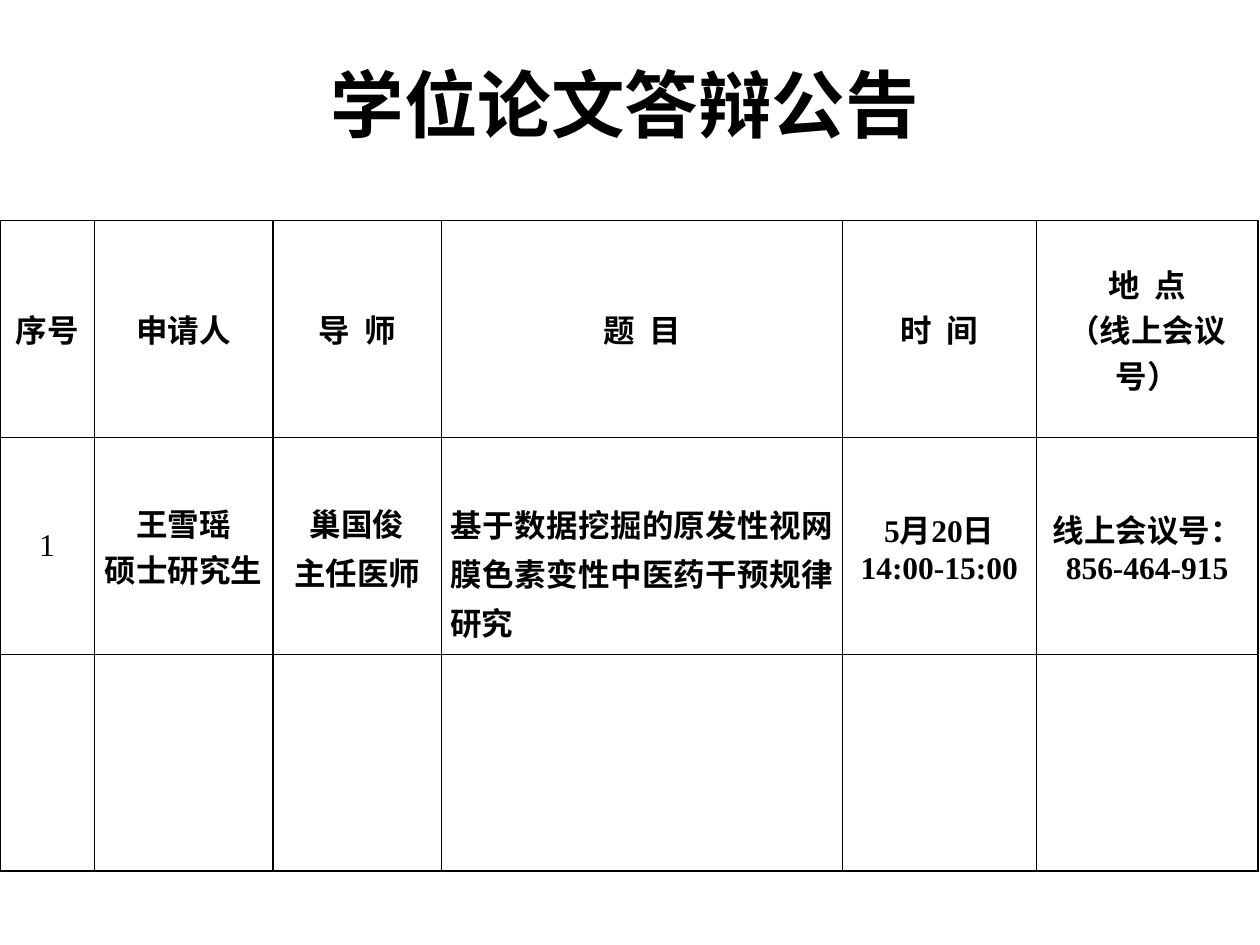
"""Build a one-slide thesis defence announcement with a schedule table."""
from lxml import etree
from pptx import Presentation
from pptx.dml.color import RGBColor
from pptx.enum.text import MSO_ANCHOR, MSO_AUTO_SIZE, PP_ALIGN
from pptx.oxml.ns import qn
from pptx.util import Cm, Pt

BLACK = RGBColor(0, 0, 0)
WHITE = RGBColor(255, 255, 255)
CENTER = PP_ALIGN.CENTER
JUSTIFY = PP_ALIGN.JUSTIFY
MIDDLE = MSO_ANCHOR.MIDDLE
NO_AUTOFIT = MSO_AUTO_SIZE.NONE
FONT = "Times New Roman"
TITLE_ONLY = 5
TOPIC_COLUMN = 3
COLUMN_WIDTHS = [1.9, 3.6, 3.4, 8.08, 3.91, 4.47]
ROW_HEIGHT = 4.37
FIXED_SPACING_COLUMNS = (2, TOPIC_COLUMN)
ROWS = [
    [["序号"], ["申请人"], ["导  师"], ["题  目"], ["时  间"], ["地  点", "（线上会议号）"]],
    [
        ["1"],
        ["王雪瑶", "硕士研究生"],
        ["巢国俊", "主任医师"],
        ["基于数据挖掘的原发性视网膜色素变性中医药干预规律研究"],
        ["5月20日", "14:00-15:00"],
        ["线上会议号：856-464-915"],
    ],
    [[] for _ in COLUMN_WIDTHS],
]


def write_lines(text_frame, lines, size, bold=True):
    for index, line in enumerate(lines):
        paragraph = text_frame.paragraphs[0] if index == 0 else text_frame.add_paragraph()
        paragraph.alignment = CENTER
        run = paragraph.add_run()
        run.text = line
        run.font.name = FONT
        run.font.size = Pt(size)
        run.font.bold = bold
        run.font.color.rgb = BLACK


def add_borders(cell):
    properties = cell._tc.get_or_add_tcPr()
    for position, side in enumerate(("a:lnL", "a:lnR", "a:lnT", "a:lnB")):
        line = etree.Element(qn(side), w=str(Pt(1)))
        fill = etree.SubElement(line, qn("a:solidFill"))
        etree.SubElement(fill, qn("a:srgbClr"), val=str(BLACK))
        properties.insert(position, line)


presentation = Presentation()
presentation.slide_width = Cm(25.4)
presentation.slide_height = Cm(19.05)
slide = presentation.slides.add_slide(presentation.slide_layouts[TITLE_ONLY])

title = slide.shapes.title
title.left, title.top, title.width, title.height = Cm(5.51), Cm(0.94), Cm(14.17), Cm(3.05)
title.text_frame.auto_size = NO_AUTOFIT
title.text_frame.word_wrap = True
title.text_frame.vertical_anchor = MIDDLE
title.text_frame.margin_bottom = Cm(0.9)
write_lines(title.text_frame, ["学位论文答辩公告"], 42)

schedule = slide.shapes.add_table(
    len(ROWS), len(COLUMN_WIDTHS), Cm(0), Cm(4.45),
    Cm(sum(COLUMN_WIDTHS)), Cm(ROW_HEIGHT * len(ROWS)),
).table
schedule.first_row = False
schedule.horz_banding = False
for column, width in zip(schedule.columns, COLUMN_WIDTHS):
    column.width = Cm(width)

for row_index, row in enumerate(ROWS):
    schedule.rows[row_index].height = Cm(ROW_HEIGHT)
    for column_index, lines in enumerate(row):
        cell = schedule.cell(row_index, column_index)
        cell.fill.solid()
        cell.fill.fore_color.rgb = WHITE
        cell.vertical_anchor = MIDDLE
        add_borders(cell)
        is_number = row_index == 1 and column_index == 0
        write_lines(cell.text_frame, lines, 18, bold=not is_number)
        if row_index == 1 and not is_number:
            cell.margin_left = cell.margin_right = Cm(0.18)
            cell.margin_top = cell.margin_bottom = Cm(0)
            if column_index in FIXED_SPACING_COLUMNS:
                for paragraph in cell.text_frame.paragraphs:
                    paragraph.line_spacing = Pt(28)

topic = schedule.cell(1, TOPIC_COLUMN)
topic.margin_top = Cm(1)
topic.text_frame.paragraphs[0].alignment = JUSTIFY

presentation.save("out.pptx")
